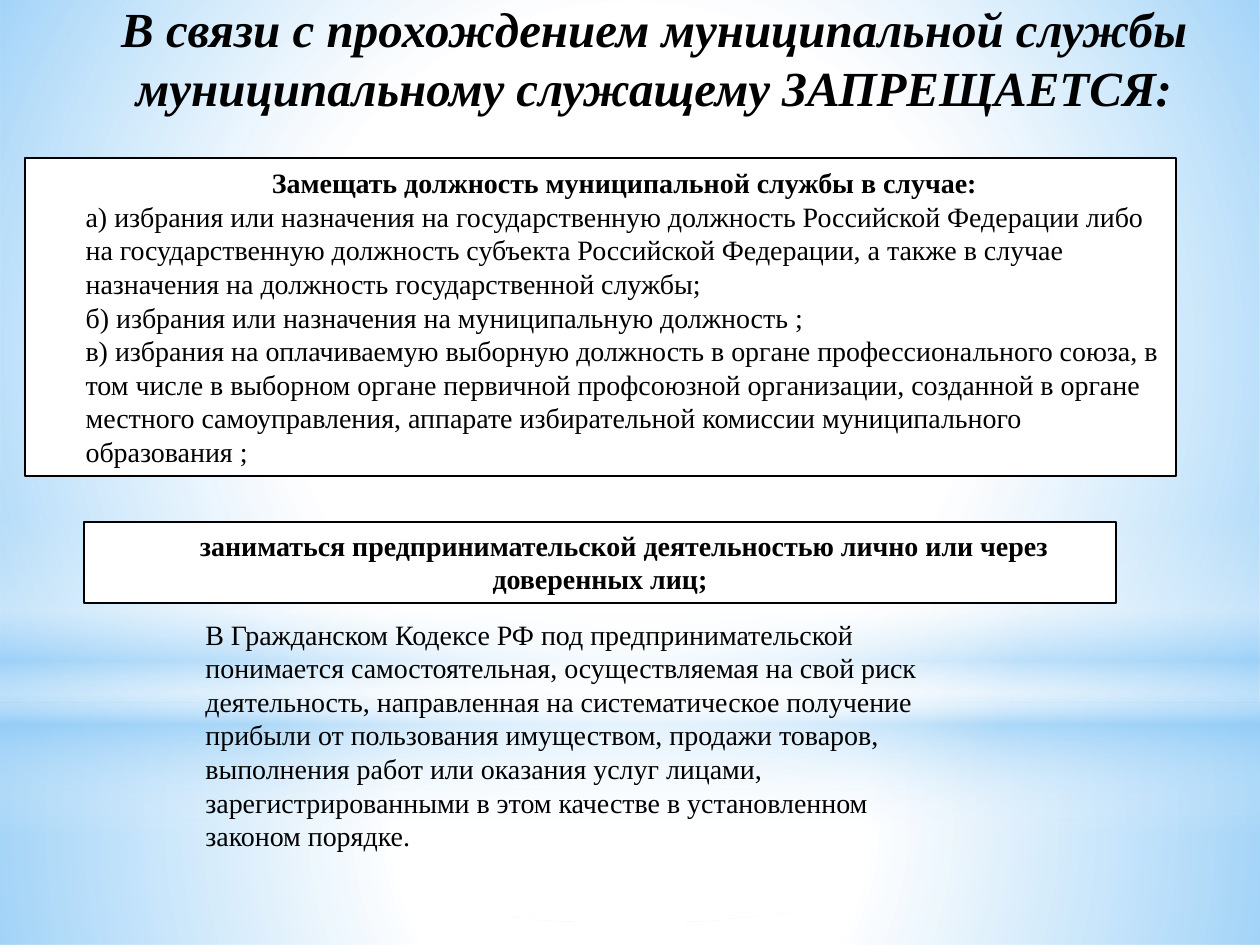
from lxml.etree import SubElement
from pptx import Presentation
from pptx.dml.color import RGBColor
from pptx.enum.shapes import MSO_SHAPE
from pptx.enum.text import MSO_ANCHOR, MSO_AUTO_SIZE, PP_ALIGN
from pptx.oxml.ns import qn
from pptx.util import Emu, Pt

PX = 914400 // 126
WIDTH, HEIGHT = 1260, 945
FONT = "Times New Roman"
BLACK, WHITE, SKY = "000000", "FFFFFF", "8BC9F7"
INDENT = 48

TITLE = "В связи с прохождением муниципальной службы муниципальному служащему ЗАПРЕЩАЕТСЯ:"
CASES_HEADING = "Замещать должность муниципальной службы в случае:"
CASES = [
    "а) избрания или назначения на государственную должность Российской Федерации либо "
    "на государственную должность субъекта Российской Федерации, а также в случае "
    "назначения на должность государственной службы;",
    "б) избрания или назначения на муниципальную должность ;",
    "в) избрания на оплачиваемую выборную должность в органе профессионального союза, в "
    "том числе в выборном органе первичной профсоюзной организации, созданной в органе "
    "местного самоуправления, аппарате избирательной комиссии муниципального образования ;",
]
BUSINESS_BAN = ("заниматься предпринимательской деятельностью лично или через "
                "доверенных лиц;")
DEFINITION = (
    "В Гражданском Кодексе РФ под предпринимательской понимается самостоятельная, "
    "осуществляемая на свой риск деятельность, направленная на систематическое получение "
    "прибыли от пользования имуществом, продажи товаров, выполнения работ или оказания "
    "услуг лицами, зарегистрированными в этом качестве в установленном законом порядке."
)


def px(value):
    return Emu(value * PX)


def color(value):
    return RGBColor.from_string(value)


def place(shape, left, top, width, height):
    shape.left, shape.top = px(left), px(top)
    shape.width, shape.height = px(width), px(height)


def add_glow(slide, preset, box, stops, radial=True):
    """Add a borderless gradient; stops are (position %, colour, opacity %)."""
    shape = slide.shapes.add_shape(preset, *map(px, box))
    shape.shadow.inherit = False
    shape.line.fill.background()
    properties = shape._element.spPr
    gradient = properties.makeelement(qn("a:gradFill"), {"rotWithShape": "1"})
    properties.find(qn("a:prstGeom")).addnext(gradient)
    stop_list = SubElement(gradient, qn("a:gsLst"))
    for position, value, opacity in stops:
        stop = SubElement(stop_list, qn("a:gs"), pos=str(position * 1000))
        stop_color = SubElement(stop, qn("a:srgbClr"), val=value)
        SubElement(stop_color, qn("a:alpha"), val=str(opacity * 1000))
    if radial:
        direction = SubElement(gradient, qn("a:path"), path="circle")
        sides = {side: "50000" for side in "ltrb"}
        SubElement(direction, qn("a:fillToRect"), sides)
    else:
        SubElement(gradient, qn("a:lin"), ang="5400000", scaled="0")


def add_background(slide):
    horizon = 703
    add_glow(slide, MSO_SHAPE.RECTANGLE, (0, horizon, WIDTH, HEIGHT - horizon),
             [(0, WHITE, 91), (37, WHITE, 76), (100, SKY, 79)])
    add_glow(slide, MSO_SHAPE.RECTANGLE, (0, 0, WIDTH, horizon),
             [(0, WHITE, 89), (48, WHITE, 62), (100, SKY, 79)])
    add_glow(slide, MSO_SHAPE.RECTANGLE, (0, 519, WIDTH, 315),
             [(0, WHITE, 0), (29, WHITE, 30), (45, SKY, 40),
              (55, WHITE, 26), (65, SKY, 60), (100, WHITE, 0)], radial=False)
    add_glow(slide, MSO_SHAPE.OVAL, (0, 220, WIDTH, 703),
             [(0, WHITE, 100), (56, WHITE, 0)])


def setup_frame(shape, anchor=MSO_ANCHOR.TOP):
    frame = shape.text_frame
    frame.word_wrap = True
    frame.auto_size = MSO_AUTO_SIZE.NONE
    frame.vertical_anchor = anchor
    return frame


def write(paragraph, text, size=16, bold=False, italic=False,
          align=PP_ALIGN.LEFT, margin=0, first_line=0):
    properties = paragraph._p.get_or_add_pPr()
    properties.set("marL", str(px(margin)))
    properties.set("indent", str(px(first_line)))
    SubElement(properties, qn("a:buNone"))
    paragraph.alignment = align
    paragraph.space_before = Pt(0)
    run = paragraph.add_run()
    run.text = text
    font = run.font
    font.name, font.size = FONT, Pt(size)
    font.bold, font.italic = bold, italic
    font.color.rgb = color(BLACK)


def add_frame_style(shape):
    shape.fill.solid()
    shape.fill.fore_color.rgb = color(WHITE)
    shape.line.color.rgb = color(BLACK)
    shape.line.width = Pt(1.25)


def bring_to_front(slide, shape):
    slide.shapes._spTree.append(shape._element)


def add_title(slide):
    title = slide.shapes.title
    place(title, 0, -9, WIDTH, 132)
    bring_to_front(slide, title)
    frame = setup_frame(title, MSO_ANCHOR.MIDDLE)
    write(frame.paragraphs[0], TITLE, size=28, bold=True, italic=True,
          align=PP_ALIGN.CENTER, margin=INDENT)


def add_cases(slide):
    body = slide.placeholders[1]
    place(body, 25, 158, 1151, 318)
    bring_to_front(slide, body)
    add_frame_style(body)
    frame = setup_frame(body, MSO_ANCHOR.MIDDLE)
    write(frame.paragraphs[0], CASES_HEADING, bold=True,
          align=PP_ALIGN.CENTER, margin=INDENT)
    for case in CASES:
        write(frame.add_paragraph(), case, margin=INDENT)


def add_business_ban(slide):
    box = slide.shapes.add_shape(MSO_SHAPE.RECTANGLE, *map(px, (84, 522, 1032, 81)))
    box.shadow.inherit = False
    add_frame_style(box)
    write(setup_frame(box).paragraphs[0], BUSINESS_BAN, bold=True,
          align=PP_ALIGN.CENTER, first_line=INDENT)


def add_definition(slide):
    box = slide.shapes.add_textbox(*map(px, (193, 611, 774, 249)))
    write(setup_frame(box).paragraphs[0], DEFINITION)


def main():
    presentation = Presentation()
    presentation.slide_width, presentation.slide_height = px(WIDTH), px(HEIGHT)
    slide = presentation.slides.add_slide(presentation.slide_layouts[1])
    add_background(slide)
    add_title(slide)
    add_cases(slide)
    add_business_ban(slide)
    add_definition(slide)
    presentation.save("out.pptx")


if __name__ == "__main__":
    main()
